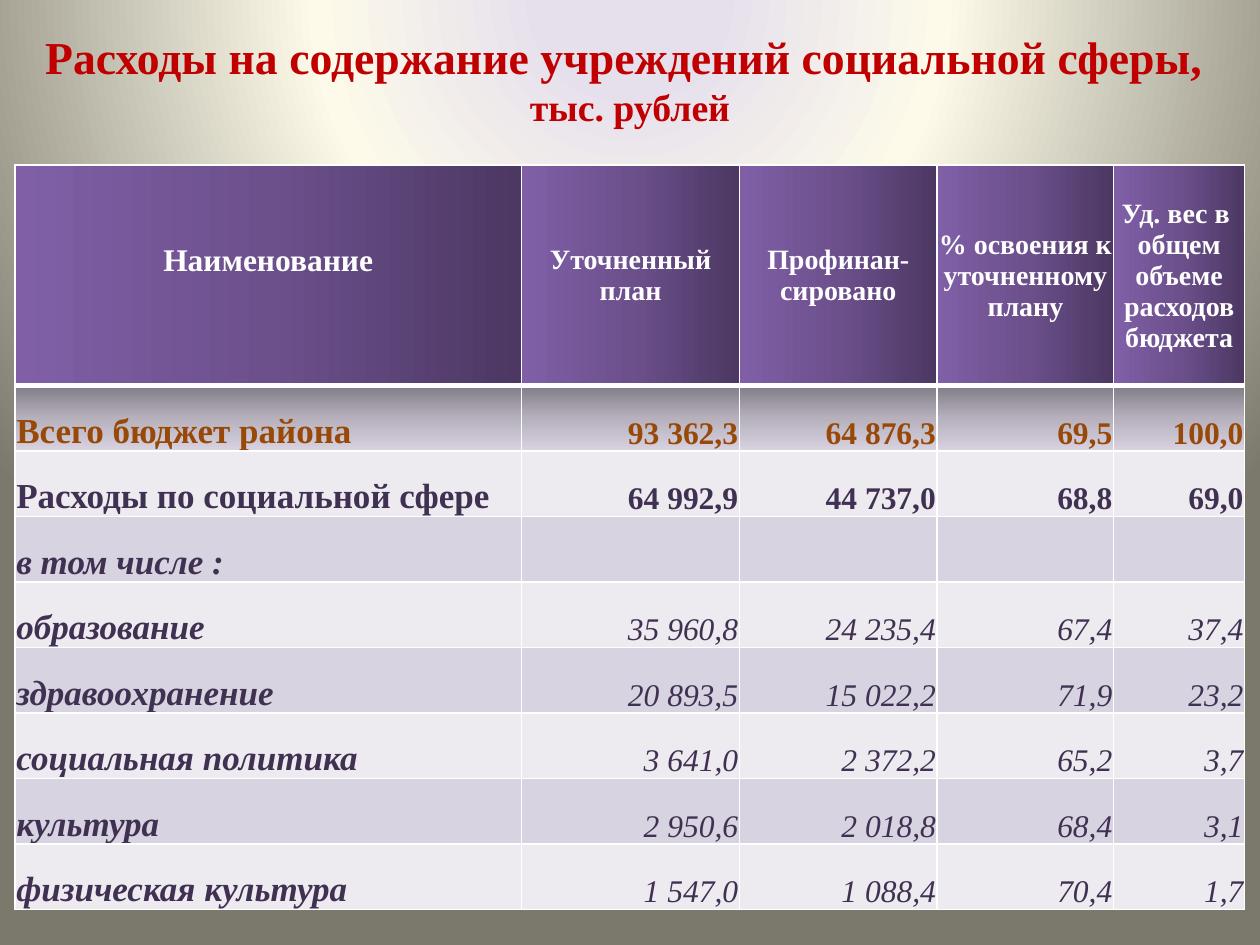
from lxml import etree
from pptx import Presentation
from pptx.dml import color
from pptx.enum import text
from pptx.oxml import ns
from pptx.util import Pt

FONT = "Times New Roman"
HEADER_STOPS = [(0, "4C3863"), (50, "6C508C"), (100, "805FA7")]
TOTAL_STOPS = [(0, "807C85"), (50, "B6B1BD"), (100, "D8D2E1")]
PAGE_STOPS = [(11, "E6E0EC"), (40, "FDFAEA"), (100, "7B796B")]
BANDS = ["D8D3E0", "EDEAF0"]
RED, BROWN, VIOLET, WHITE = "C00000", "984807", "403152", "FFFFFF"

COLUMNS = [289.4, 124.6, 113, 100.8, 74.9]
HEADER_HEIGHT, ROW_HEIGHT = 126, 37.44
HEADERS = ["Наименование", "Уточненный план", "Профинан-сировано",
           "% освоения к уточненному плану",
           "Уд. вес в  общем объеме расходов бюджета"]
ROWS = [
    ["Всего бюджет района", "93 362,3", "64 876,3", "69,5", "100,0"],
    ["Расходы по социальной сфере", "64 992,9", "44 737,0", "68,8", "69,0"],
    ["в том числе :", "", "", "", ""],
    ["образование", "35 960,8", "24 235,4", "67,4", "37,4"],
    ["здравоохранение", "20 893,5", "15 022,2", "71,9", "23,2"],
    ["социальная политика", "3 641,0", "2 372,2", "65,2", "3,7"],
    ["культура", "2 950,6", "2 018,8", "68,4", "3,1"],
    ["физическая культура", "1 547,0", "1 088,4", "70,4", "1,7"],
]


def rgb(value):
    return color.RGBColor.from_string(value)


def add_element(parent, tag, **attributes):
    element = etree.SubElement(parent, ns.qn(tag))
    for name, value in attributes.items():
        element.set(name, str(value))
    return element


def add_gradient(parent, stops, angle=None):
    """Append a linear gradient, or a circular one when no angle is given."""
    gradient = add_element(parent, "a:gradFill", rotWithShape=1)
    stop_list = add_element(gradient, "a:gsLst")
    for position, value in stops:
        stop = add_element(stop_list, "a:gs", pos=position * 1000)
        add_element(stop, "a:srgbClr", val=value)
    if angle is None:
        circle = add_element(gradient, "a:path", path="circle")
        add_element(circle, "a:fillToRect", l=50000, t=-80000, r=50000, b=180000)
    else:
        add_element(gradient, "a:lin", ang=angle * 60000, scaled=0)
    return gradient


def add_borders(cell, top=1, bottom=1):
    properties = cell._tc.get_or_add_tcPr()
    for side, width in zip("LRTB", (1, 1, top, bottom)):
        line = add_element(properties, f"a:ln{side}", w=Pt(width))
        fill = add_element(line, "a:solidFill")
        add_element(fill, "a:srgbClr", val=WHITE)


def style_span(span, size, value, bold=True, italic=False):
    font = span.font
    font.name, font.size = FONT, Pt(size)
    font.bold, font.italic = bold, italic
    font.color.rgb = rgb(value)


def write_cell(cell, words, align, anchor, **style):
    if not words:
        return
    cell.text_frame.text = words
    cell.vertical_anchor = anchor
    cell.margin_left = cell.margin_right = cell.margin_top = Pt(0.75)
    cell.margin_bottom = 0
    para = cell.text_frame.paragraphs[0]
    para.alignment = align
    style_span(para.runs[0], **style)


def paint_background(page):
    fill = page.background.fill
    fill.solid()
    properties = page._element.cSld.bg.bgPr
    solid = properties.find(ns.qn("a:solidFill"))
    properties.replace(solid, add_gradient(properties, PAGE_STOPS))


def place_title(page, left, top, width, height):
    title = page.shapes.title
    title.left, title.top, title.width, title.height = map(
        Pt, (left, top, width, height))
    frame = title.text_frame
    frame.text = "Расходы на содержание учреждений социальной сферы, \vтыс. рублей"
    frame.word_wrap = True
    frame.auto_size = text.MSO_AUTO_SIZE.NONE
    frame.vertical_anchor = text.MSO_ANCHOR.BOTTOM
    para = frame.paragraphs[0]
    para.alignment = text.PP_ALIGN.CENTER
    for span, size in zip(para.runs, (26.1, 21.6)):
        style_span(span, size, RED)


def fill_header(table):
    for column, words in enumerate(HEADERS):
        cell = table.cell(0, column)
        write_cell(cell, words, text.PP_ALIGN.CENTER, text.MSO_ANCHOR.MIDDLE,
                   size=16 if column else 18, value=WHITE)
        add_borders(cell, bottom=3)
        add_gradient(cell._tc.tcPr, HEADER_STOPS, 180)
    name = table.cell(0, 0)
    name.vertical_anchor = text.MSO_ANCHOR.TOP
    name.margin_top = Pt(45)


def fill_row(table, row, values):
    for column, words in enumerate(values):
        cell = table.cell(row, column)
        write_cell(cell, words,
                   text.PP_ALIGN.RIGHT if column else text.PP_ALIGN.LEFT,
                   text.MSO_ANCHOR.BOTTOM,
                   size=18 if column else 20,
                   value=BROWN if row == 1 else VIOLET,
                   bold=column == 0 or row <= 2, italic=row > 2)
        add_borders(cell, top=3 if row == 1 else 1)
        if row == 1:
            add_gradient(cell._tc.tcPr, TOTAL_STOPS, 90)
        else:
            cell.fill.solid()
            cell.fill.fore_color.rgb = rgb(BANDS[(row + 1) % 2])


def place_table(page, left, top):
    height = HEADER_HEIGHT + ROW_HEIGHT * len(ROWS)
    table = page.shapes.add_table(
        len(ROWS) + 1, len(COLUMNS),
        Pt(left), Pt(top), Pt(sum(COLUMNS)), Pt(height)).table
    for column, width in zip(table.columns, COLUMNS):
        column.width = Pt(width)
    for index, row in enumerate(table.rows):
        row.height = Pt(ROW_HEIGHT if index else HEADER_HEIGHT)
    fill_header(table)
    for row, values in enumerate(ROWS, 1):
        fill_row(table, row, values)


def main():
    deck = Presentation()
    deck.slide_width, deck.slide_height = Pt(720), Pt(540)
    page = deck.slides.add_slide(deck.slide_layouts[5])
    paint_background(page)
    place_title(page, 0, 9.4, 720, 67.7)
    place_table(page, 8.6, 94.3)
    deck.save("out.pptx")


if __name__ == "__main__":
    main()
